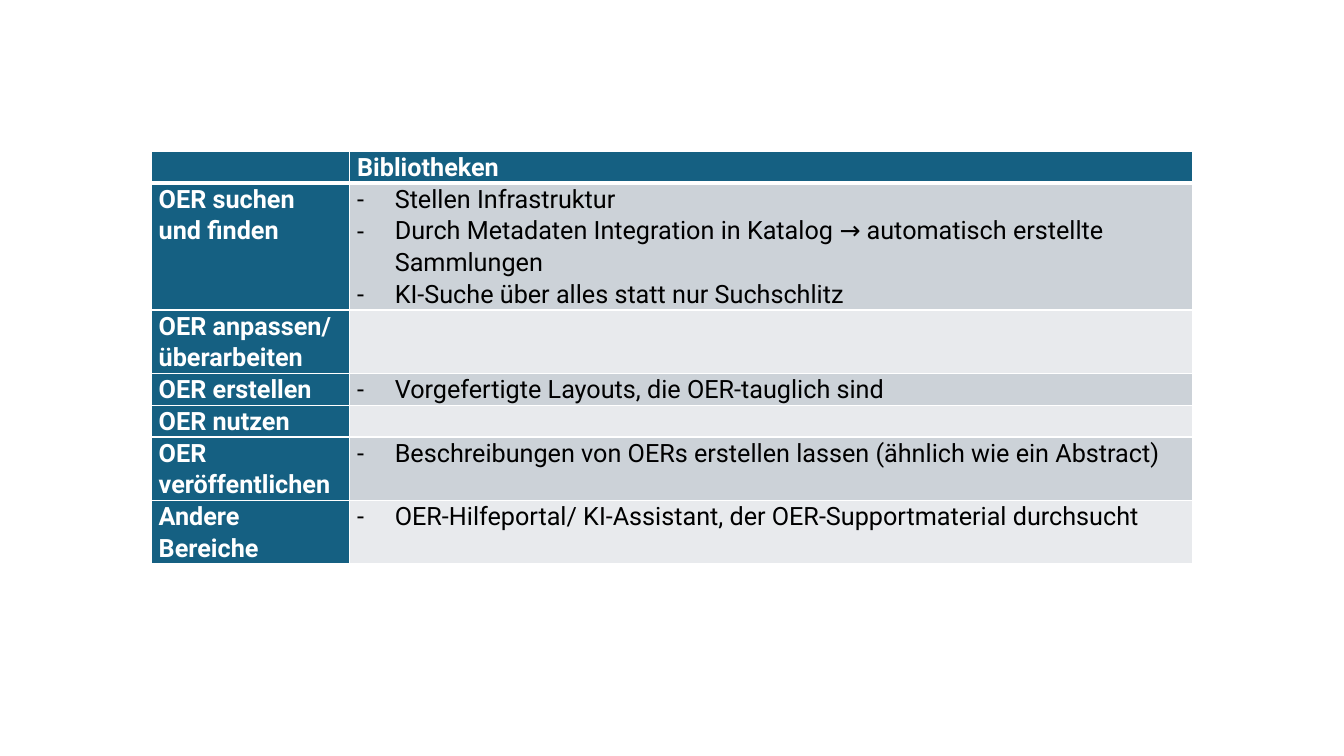
from lxml.etree import SubElement
from pptx import Presentation
from pptx.dml.color import RGBColor as RGB
from pptx.oxml.ns import qn
from pptx.util import Cm, Pt

WHITE = RGB(0xFF, 0xFF, 0xFF)
BLACK = RGB(0, 0, 0)
TEAL = RGB(0x15, 0x60, 0x82)
BANDS = RGB(0xCC, 0xD2, 0xD8), RGB(0xE8, 0xEA, 0xED)
LINE = 0.8
ROWS = [
    (4, "OER suchen und finden", [
        "Stellen Infrastruktur",
        "Durch Metadaten Integration in Katalog → automatisch erstellte Sammlungen",
        "KI-Suche über alles statt nur Suchschlitz"]),
    (2, "OER anpassen/ überarbeiten", [""]),
    (1, "OER erstellen", ["Vorgefertigte Layouts, die OER-tauglich sind"]),
    (1, "OER nutzen", []),
    (2, "OER veröffentlichen",
     ["Beschreibungen von OERs erstellen lassen (ähnlich wie ein Abstract)"]),
    (2, "Andere Bereiche",
     ["OER-Hilfeportal/ KI-Assistant, der OER-Supportmaterial durchsucht"]),
]


class Deck:
    """Holds the text style and the current slide, and draws its elements."""

    def __init__(self, font, size):
        self.font, self.size = font, Pt(size)
        self.prs = Presentation()
        self.prs.slide_width, self.prs.slide_height = Cm(33.87), Cm(19.05)
        self.slide = self.prs.slides.add_slide(self.prs.slide_layouts[6])

    def table(self, left, top, widths, heights):
        frame = self.slide.shapes.add_table(
            len(heights), len(widths), Cm(left), Cm(top),
            Cm(sum(widths)), Cm(sum(heights)))
        grid = frame.table
        for col, width in zip(grid.columns, widths):
            col.width = Cm(width)
        for row, height in zip(grid.rows, heights):
            row.height = Cm(height)
        return grid

    def cell(self, cell, fill, above=1, below=1):
        cell.margin_left = cell.margin_right = Cm(0.19)
        cell.margin_top = cell.margin_bottom = 0
        props = cell._tc.get_or_add_tcPr()
        for side, width in zip("LRTB", (1, 1, above, below)):
            edge = SubElement(props, qn("a:ln" + side), w=str(Pt(width)))
            paint = SubElement(edge, qn("a:solidFill"))
            SubElement(paint, qn("a:srgbClr"), val=str(WHITE))
        cell.fill.solid()
        cell.fill.fore_color.rgb = fill

    def text(self, para, words, color, bold=False, after=8):
        para.line_spacing = 1.07
        para.space_after = Pt(after)
        run = para.add_run()
        run.text = words
        font = run.font
        font.name, font.size, font.bold = self.font, self.size, bold
        font.color.rgb = color

    def items(self, cell, items):
        frame = cell.text_frame
        for i, words in enumerate(items):
            para = frame.add_paragraph() if i else frame.paragraphs[0]
            last = i == len(items) - 1
            self.text(para, words, BLACK, after=8 if last else 0)
            props = para._p.get_or_add_pPr()
            props.set("marL", str(Cm(0.95)))
            props.set("indent", str(-Cm(0.95)))
            SubElement(props, qn("a:buFont"), typeface=self.font)
            SubElement(props, qn("a:buChar"), char="-")

    def head(self, cell, words):
        self.text(cell.text_frame.paragraphs[0], words, WHITE, bold=True)


def main():
    deck = Deck("Roboto", 18)
    heights = [LINE] + [LINE * lines for lines, _, _ in ROWS]
    grid = deck.table(3.81, 3.81, [5, 21.25], heights)
    for col in range(2):
        deck.cell(grid.cell(0, col), TEAL, below=3)
    deck.head(grid.cell(0, 1), "Bibliotheken")
    for row, (_, topic, items) in enumerate(ROWS, 1):
        label, body = grid.cell(row, 0), grid.cell(row, 1)
        above = 3 if row == 1 else 1
        deck.cell(label, TEAL, above)
        deck.cell(body, BANDS[(row - 1) % 2], above)
        deck.head(label, topic)
        deck.items(body, items)
    deck.prs.save("out.pptx")


if __name__ == "__main__":
    main()
